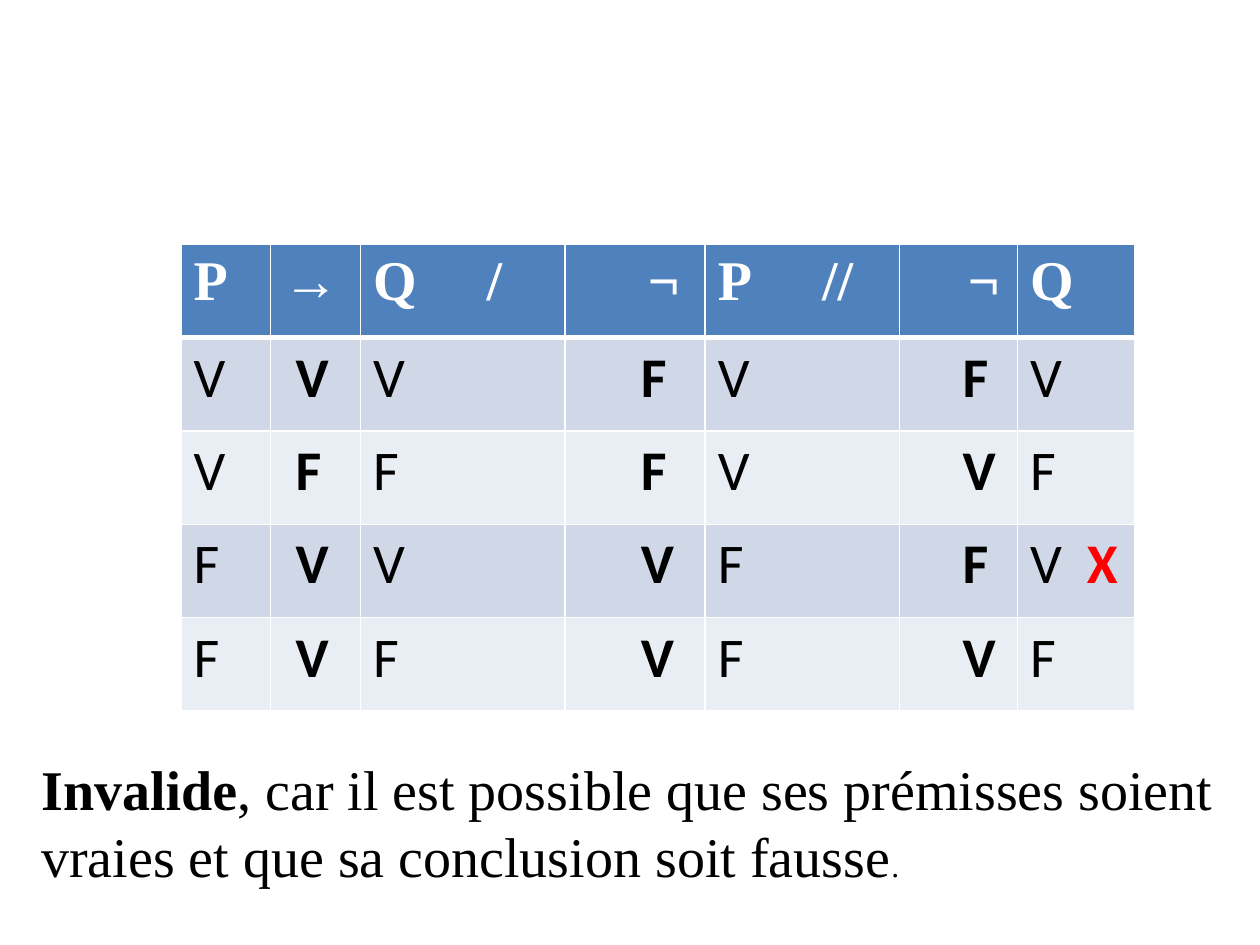
from itertools import product

from lxml.etree import SubElement
from pptx import Presentation
from pptx.dml.color import RGBColor
from pptx.oxml.ns import qn
from pptx.util import Pt

SERIF, SANS = "Times New Roman", "Calibri"
WHITE, BLACK, RED, BLUE = "FFFFFF", "000000", "FF0000", "4F81BD"
BANDS = ["D0D8E8", "E9EDF4"]
WIDTHS = [51, 51.5, 117, 80, 111, 67.5, 67]
HEADER = ["P", "→", "Q", "¬", "P", "¬", "Q"]
SEPARATORS = {2: "/", 4: "//"}
HEADER_INDENTS = {3: 40, 5: 32}
OPERATOR_INDENTS = {1: 7.2, 3: 36, 5: 29}


def color(value):
    return RGBColor.from_string(value)


def add_text(p, text, font=SERIF, size=32, fill=BLACK, bold=False, spacing=0):
    r = p.add_run()
    r.text = text
    r.font.name, r.font.size, r.font.bold = font, Pt(size), bold
    r.font.color.rgb = color(fill)
    if spacing:
        r._r.get_or_add_rPr().set("spc", str(round(spacing * 100)))


def set_indent(p, indent):
    pPr = p._p.get_or_add_pPr()
    pPr.set("marL", str(Pt(indent)))
    pPr.set("indent", "0")


def format_cell(cell, fill, top=1, bottom=1):
    cell.fill.solid()
    cell.fill.fore_color.rgb = color(fill)
    tcPr = cell._tc.get_or_add_tcPr()
    # Borders come before the fill in the cell properties
    for i, (side, width) in enumerate(zip("LRTB", (1, 1, top, bottom))):
        ln = SubElement(tcPr, qn(f"a:ln{side}"), w=str(Pt(width)))
        solid = SubElement(ln, qn("a:solidFill"))
        SubElement(solid, qn("a:srgbClr"), val=WHITE)
        tcPr.insert(i, ln)


def truth_rows():
    """Values of P → Q, ¬P and ¬Q, and whether the row is a counterexample."""
    for p, q in product([True, False], repeat=2):
        implies = not p or q
        values = [p, implies, q, not p, p, not q, q]
        yield ["V" if v else "F" for v in values], implies and not p and q


def add_truth_table(slide, left, top, width, height):
    table = slide.shapes.add_table(5, len(WIDTHS), Pt(left), Pt(top),
                                   Pt(width), Pt(height)).table
    for column, w in zip(table.columns, WIDTHS):
        column.width = Pt(w)
    for row in table.rows:
        row.height = Pt(height / 5)

    # Header, with a widened space before each separator
    for c, label in enumerate(HEADER):
        cell = table.cell(0, c)
        format_cell(cell, BLUE, bottom=3)
        p = cell.text_frame.paragraphs[0]
        set_indent(p, HEADER_INDENTS.get(c, 0))
        add_text(p, label, fill=WHITE, bold=True)
        if c in SEPARATORS:
            add_text(p, " ", fill=WHITE, bold=True, spacing=32)
            add_text(p, SEPARATORS[c], fill=WHITE, bold=True)

    # Truth values, with the counterexample marked in the last column
    for i, (values, counterexample) in enumerate(truth_rows()):
        for c, value in enumerate(values):
            cell = table.cell(i + 1, c)
            format_cell(cell, BANDS[i % 2], top=3 if i == 0 else 1)
            p = cell.text_frame.paragraphs[0]
            set_indent(p, OPERATOR_INDENTS.get(c, 0))
            add_text(p, value, font=SANS, bold=c in OPERATOR_INDENTS)
            if counterexample and c == len(values) - 1:
                add_text(p, " ", font=SANS, spacing=7)
                add_text(p, "X", font=SANS, fill=RED, bold=True)


def add_conclusion(slide, left, top, width, height):
    tf = slide.shapes.add_textbox(Pt(left), Pt(top), Pt(width), Pt(height)).text_frame
    tf.word_wrap = True
    p = tf.paragraphs[0]
    add_text(p, "Invalide", bold=True)
    add_text(p, ", car il est possible que ses prémisses soient vraies "
                "et que sa conclusion soit fausse")
    add_text(p, ".", size=18)


def main():
    prs = Presentation()
    prs.slide_width, prs.slide_height = Pt(720), Pt(540)
    slide = prs.slides.add_slide(prs.slide_layouts[6])
    add_truth_table(slide, 103.5, 139.5, sum(WIDTHS), 267)
    add_conclusion(slide, 16.5, 427.5, 703.5, 85)
    prs.save("out.pptx")


if __name__ == "__main__":
    main()
